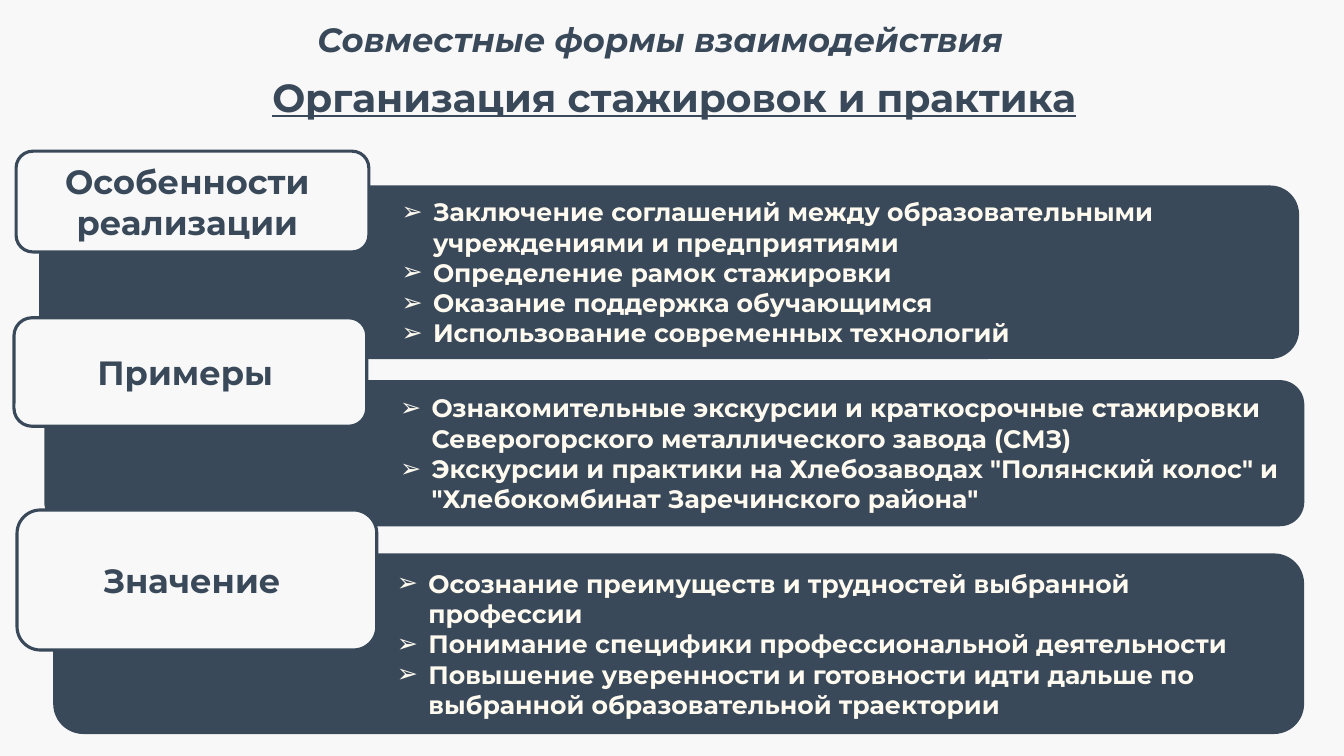
from lxml import etree
from pptx import Presentation
from pptx.dml.color import RGBColor
from pptx.enum import shapes, text
from pptx.oxml import ns
from pptx.util import Pt

SECTIONS = [
    # heading, card box, bar box, left edge of the list, list items
    ("Особенности реализации", (11.5, 108, 252, 72), (28, 132.5, 900, 124), 273.6, [
        "Заключение соглашений между образовательными учреждениями и предприятиями",
        "Определение рамок стажировки",
        "Оказание поддержка обучающимся",
        "Использование современных технологий"]),
    ("Примеры", (10, 227, 252, 77.5), (31.7, 271.5, 900, 104.4), 273.6, [
        "Ознакомительные экскурсии и краткосрочные стажировки "
        "Северогорского металлического завода (СМЗ)",
        "Экскурсии и практики на Хлебозаводах \"Полянский колос\" и "
        "\"Хлебокомбинат Заречинского района\""]),
    ("Значение", (12.2, 364.3, 257, 100), (38, 395.3, 893.5, 129), 270, [
        "Осознание преимуществ и трудностей выбранной профессии",
        "Понимание специфики профессиональной деятельности",
        "Повышение уверенности и готовности идти дальше по "
        "выбранной образовательной траектории"]),
]


def colour(value):
    return RGBColor.from_string(value)


class SlideBuilder:
    font = "Montserrat"
    dark = "394959"
    light = "F8F8F8"
    cream = "FFFAF0"
    inset = 7.2
    bullet_indent = 22.5

    def __init__(self, presentation):
        self.slide = presentation.slides.add_slide(presentation.slide_layouts[5])
        fill = self.slide.background.fill
        fill.solid()
        fill.fore_color.rgb = colour(self.light)

    def set_text(self, shape, lines, size, ink, align, italic=False, underline=False):
        frame = shape.text_frame
        frame.text = "\n".join(lines)
        frame.word_wrap = True
        frame.auto_size = text.MSO_AUTO_SIZE.NONE
        frame.vertical_anchor = text.MSO_ANCHOR.MIDDLE
        frame.margin_left = frame.margin_right = Pt(self.inset)
        frame.margin_top = frame.margin_bottom = 0
        for paragraph in frame.paragraphs:
            paragraph.alignment = align
            for run in paragraph.runs:
                font = run.font
                font.name, font.size, font.bold = self.font, Pt(size), True
                font.italic, font.underline = italic, underline
                font.color.rgb = colour(ink)
        return frame

    def title(self, line, left, top, width, height):
        shape = self.slide.shapes.title
        shape.left, shape.top = Pt(left), Pt(top)
        shape.width, shape.height = Pt(width), Pt(height)
        self.set_text(shape, [line], 28, self.dark, text.PP_ALIGN.CENTER, underline=True)

    def overline(self, line, *box):
        """Add the italic line above the title."""
        shape = self.slide.shapes.add_textbox(*map(Pt, box))
        self.set_text(shape, [line], 24, self.dark, text.PP_ALIGN.CENTER, italic=True)

    def rounded(self, box, fill):
        shape = self.slide.shapes.add_shape(
            shapes.MSO_SHAPE.ROUNDED_RECTANGLE, *map(Pt, box))
        shape.shadow.inherit = False
        shape.fill.solid()
        shape.fill.fore_color.rgb = colour(fill)
        shape.line.fill.background()
        return shape

    def bar(self, box, list_left, items):
        shape = self.rounded(box, self.dark)
        frame = self.set_text(shape, items, 18, self.cream, text.PP_ALIGN.LEFT)
        frame.margin_left = Pt(list_left - box[0] + self.inset)
        for paragraph in frame.paragraphs:
            self.bullet(paragraph)

    def bullet(self, paragraph):
        properties = paragraph._p.get_or_add_pPr()
        properties.set("marL", str(Pt(self.bullet_indent)))
        properties.set("indent", str(-Pt(self.bullet_indent)))
        etree.SubElement(properties, ns.qn("a:buFont"), typeface="Arial")
        etree.SubElement(properties, ns.qn("a:buChar"), char="➢")

    def card(self, box, heading):
        shape = self.rounded(box, self.light)
        shape.line.color.rgb = colour(self.dark)
        shape.line.width = Pt(2.25)
        frame = self.set_text(shape, [heading], 24, self.dark, text.PP_ALIGN.CENTER)
        frame.margin_right = Pt(2 * self.inset)


def main():
    presentation = Presentation()
    presentation.slide_width, presentation.slide_height = Pt(960), Pt(540)
    builder = SlideBuilder(presentation)
    builder.overline("Совместные формы взаимодействия", 0, 10, 943, 36)
    builder.title("Организация стажировок и практика", 10, 48.5, 943, 41)
    for _, _, bar_box, list_left, items in SECTIONS:
        builder.bar(bar_box, list_left, items)
    for heading, card_box, *_ in SECTIONS:
        builder.card(card_box, heading)
    presentation.save("out.pptx")


if __name__ == "__main__":
    main()
